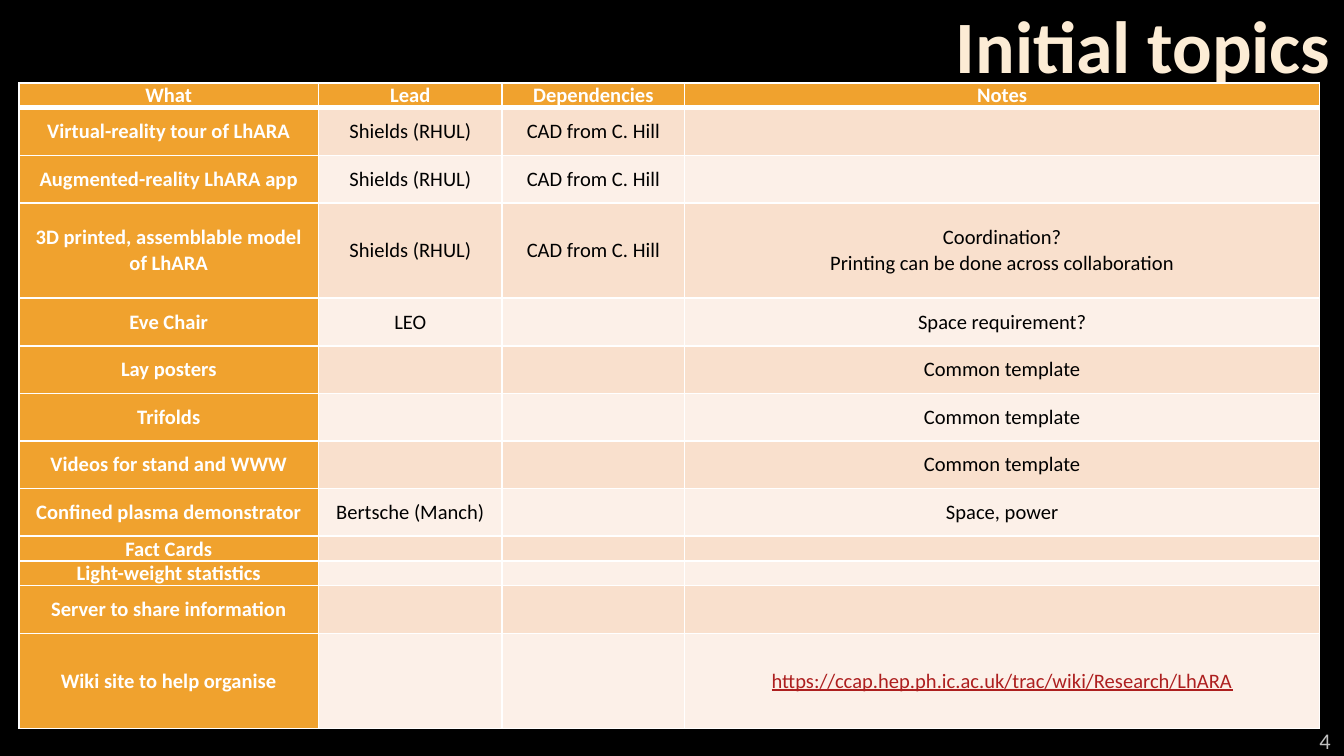
from lxml import etree
from pptx import Presentation
from pptx.dml.color import RGBColor
from pptx.enum.text import MSO_ANCHOR, PP_ALIGN
from pptx.oxml.ns import qn
from pptx.util import Cm, Pt

TOP, MIDDLE = MSO_ANCHOR.TOP, MSO_ANCHOR.MIDDLE
CENTER, RIGHT = PP_ALIGN.CENTER, PP_ALIGN.RIGHT

BLACK = RGBColor(0x00, 0x00, 0x00)
WHITE = RGBColor(0xFF, 0xFF, 0xFF)
CREAM = RGBColor(0xFC, 0xEC, 0xD5)
GREY = RGBColor(0xBF, 0xBF, 0xBF)
ORANGE = RGBColor(0xF0, 0xA2, 0x2E)
PEACH = RGBColor(0xF9, 0xE0, 0xCD)
PALE_PEACH = RGBColor(0xFC, 0xF0, 0xE8)
LINK_RED = RGBColor(0xAD, 0x1F, 0x1F)

FONT = "Calibri"
TABLE_SIZE = Pt(11)
HEADING = {"size": TABLE_SIZE, "color": WHITE, "bold": True}
BODY = {"size": TABLE_SIZE, "color": BLACK, "bold": False}
LINK = {"size": TABLE_SIZE, "color": LINK_RED, "bold": False, "underline": True}

COLUMN_WIDTHS = [5.66, 3.47, 3.45, 12.0]
ROW_UNIT = 0.45  # height of a single-line row in cm

# Each row: height in units, then What, Lead, Dependencies, Notes
ROWS = [
    (1, "What", "Lead", "Dependencies", "Notes"),
    (2, "Virtual-reality tour of LhARA", "Shields (RHUL)", "CAD from C. Hill", ""),
    (2, "Augmented-reality LhARA app", "Shields (RHUL)", "CAD from C. Hill", ""),
    (4, "3D printed, assemblable model of LhARA", "Shields (RHUL)", "CAD from C. Hill",
     "Coordination?\nPrinting can be done across collaboration"),
    (2, "Eve Chair", "LEO", "", "Space requirement?"),
    (2, "Lay posters", "", "", "Common template"),
    (2, "Trifolds", "", "", "Common template"),
    (2, "Videos for stand and WWW", "", "", "Common template"),
    (2, "Confined plasma demonstrator", "Bertsche (Manch)", "", "Space, power"),
    (1, "Fact Cards", "", "", ""),
    (1, "Light-weight statistics", "", "", ""),
    (2, "Server to share information", "", "", ""),
    (4, "Wiki site to help organise", "", "",
     "https://ccap.hep.ph.ic.ac.uk/trac/wiki/Research/LhARA"),
]


class SlideBuilder:
    def __init__(self, slide, font_name):
        self.slide = slide
        self.font_name = font_name

    def background(self, color):
        fill = self.slide.background.fill
        fill.solid()
        fill.fore_color.rgb = color

    def set_text(self, text_frame, text, style, alignment):
        text_frame.text = text
        for paragraph in text_frame.paragraphs:
            paragraph.alignment = alignment
            for run in paragraph.runs:
                run.font.name = self.font_name
                for name, value in style.items():
                    if name == "color":
                        run.font.color.rgb = value
                    else:
                        setattr(run.font, name, value)

    def text_box(self, left, top, width, height, text, style, anchor):
        shape = self.slide.shapes.add_textbox(Cm(left), Cm(top), Cm(width), Cm(height))
        frame = shape.text_frame
        frame.word_wrap = True
        frame.vertical_anchor = anchor
        frame.margin_top = frame.margin_bottom = 0
        self.set_text(frame, text, style, RIGHT)

    def cell(self, cell, text, style, fill_color, borders):
        cell.vertical_anchor = MIDDLE
        cell.margin_left = cell.margin_right = Cm(0.18)
        cell.margin_top = cell.margin_bottom = 0
        self.set_text(cell.text_frame, text, style, CENTER)
        # Keep empty cells from stretching short rows
        for paragraph in cell.text_frame.paragraphs:
            end = etree.SubElement(paragraph._p, qn("a:endParaRPr"))
            end.set("sz", str(int(style["size"].pt * 100)))
        properties = cell._tc.get_or_add_tcPr()
        for side, width in borders.items():
            line = etree.SubElement(properties, qn(f"a:ln{side}"), w=str(Pt(width)))
            solid = etree.SubElement(line, qn("a:solidFill"))
            etree.SubElement(solid, qn("a:srgbClr"), val=str(WHITE))
        cell.fill.solid()
        cell.fill.fore_color.rgb = fill_color

    def table(self, left, top, column_widths, rows):
        height = sum(row[0] for row in rows) * ROW_UNIT
        table = self.slide.shapes.add_table(
            len(rows), len(column_widths), Cm(left), Cm(top),
            Cm(sum(column_widths)), Cm(height)).table
        for column, width in zip(table.columns, column_widths):
            column.width = Cm(width)
        for row_index, (units, *texts) in enumerate(rows):
            table.rows[row_index].height = Cm(units * ROW_UNIT)
            # A thick rule separates the header from the body
            borders = {"L": 1, "R": 1, "T": 3 if row_index == 1 else 1,
                       "B": 3 if row_index == 0 else 1}
            band = PEACH if row_index % 2 else PALE_PEACH
            for column_index, text in enumerate(texts):
                is_heading = row_index == 0 or column_index == 0
                if is_heading:
                    style = HEADING
                else:
                    style = LINK if text.startswith("https") else BODY
                self.cell(table.cell(row_index, column_index), text, style,
                          ORANGE if is_heading else band, borders)


def main():
    presentation = Presentation()
    presentation.slide_width = Cm(25.4)
    presentation.slide_height = Cm(14.29)
    slide = presentation.slides.add_slide(presentation.slide_layouts[6])
    builder = SlideBuilder(slide, FONT)
    builder.background(BLACK)

    # Title
    builder.text_box(0, 0, 25.4, 1.57, "Initial topics",
                     {"size": Pt(39.6), "color": CREAM, "bold": True}, TOP)

    # Slide number
    builder.text_box(19.48, 13.69, 5.92, 0.6, "4",
                     {"size": Pt(12), "color": GREY}, MIDDLE)

    # Topics table
    builder.table(0.36, 1.57, COLUMN_WIDTHS, ROWS)

    presentation.save("out.pptx")


if __name__ == "__main__":
    main()
